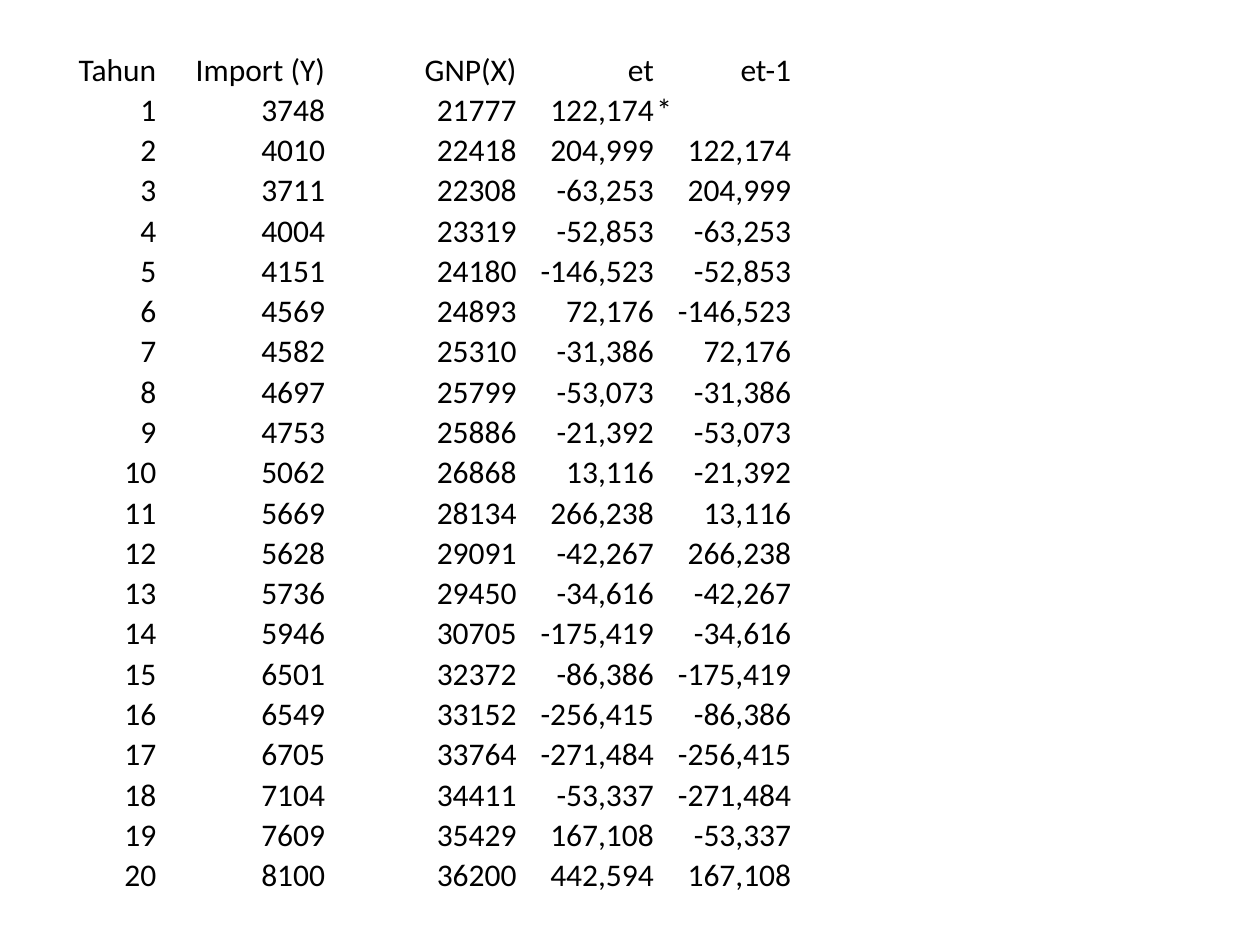
from pptx import Presentation
from pptx.dml.color import RGBColor
from pptx.enum.text import MSO_ANCHOR, PP_ALIGN
from pptx.util import Inches, Pt

HEADINGS = ["Tahun", "Import (Y)", "GNP(X)", "et", "et-1"]
OBSERVATIONS = [
    (3748, 21777, "122,174"),
    (4010, 22418, "204,999"),
    (3711, 22308, "-63,253"),
    (4004, 23319, "-52,853"),
    (4151, 24180, "-146,523"),
    (4569, 24893, "72,176"),
    (4582, 25310, "-31,386"),
    (4697, 25799, "-53,073"),
    (4753, 25886, "-21,392"),
    (5062, 26868, "13,116"),
    (5669, 28134, "266,238"),
    (5628, 29091, "-42,267"),
    (5736, 29450, "-34,616"),
    (5946, 30705, "-175,419"),
    (6501, 32372, "-86,386"),
    (6549, 33152, "-256,415"),
    (6705, 33764, "-271,484"),
    (7104, 34411, "-53,337"),
    (7609, 35429, "167,108"),
    (8100, 36200, "442,594"),
]
NO_LAG = "*"
COLORS = {"text": "000000", "background": "FFFFFF"}
COLUMN_WIDTHS = [0.86, 1.34, 1.52, 1.09, 1.09, 1.62, 1.69]
ROW_HEIGHT = 0.32
MARGIN = 0.39
CELL_FORMAT = {
    "vertical_anchor": MSO_ANCHOR.BOTTOM,
    "margin_left": Inches(0.01),
    "margin_right": Inches(0.01),
    "margin_top": Inches(0.01),
    "margin_bottom": 0,
}
FONT_FORMAT = {"name": "Calibri", "size": Pt(18), "bold": False}
TABLE_FORMAT = {"first_row": False, "horz_banding": False}


def apply_format(target, values):
    for attribute, value in values.items():
        setattr(target, attribute, value)


def residual_rows():
    residuals = [residual for *_, residual in OBSERVATIONS]
    lagged = [NO_LAG] + residuals[:-1]
    years = enumerate(zip(OBSERVATIONS, lagged), start=1)
    return [HEADINGS] + [[year, *values, lag] for year, (values, lag) in years]


def fill_cell(cell, value):
    apply_format(cell, CELL_FORMAT)
    cell.fill.solid()
    cell.fill.fore_color.rgb = RGBColor.from_string(COLORS["background"])
    if value is None:
        return
    paragraph = cell.text_frame.paragraphs[0]
    paragraph.alignment = PP_ALIGN.LEFT if value == NO_LAG else PP_ALIGN.RIGHT
    entry = paragraph.add_run()
    entry.text = str(value)
    apply_format(entry.font, FONT_FORMAT)
    entry.font.color.rgb = RGBColor.from_string(COLORS["text"])


def main():
    presentation = Presentation()
    apply_format(presentation, {"slide_width": Inches(10), "slide_height": Inches(7.5)})
    slide = presentation.slides.add_slide(presentation.slide_layouts[6])
    rows = residual_rows()
    residual_table = slide.shapes.add_table(
        len(rows), len(COLUMN_WIDTHS), Inches(MARGIN), Inches(MARGIN),
        Inches(sum(COLUMN_WIDTHS)), Inches(ROW_HEIGHT * len(rows)),
    ).table
    apply_format(residual_table, TABLE_FORMAT)
    for column, width in zip(residual_table.columns, COLUMN_WIDTHS):
        column.width = Inches(width)
    for table_row, values in zip(residual_table.rows, rows):
        table_row.height = Inches(ROW_HEIGHT)
        padding = [None] * (len(COLUMN_WIDTHS) - len(values))
        for cell, value in zip(table_row.cells, [*values, *padding]):
            fill_cell(cell, value)
    presentation.save("out.pptx")


if __name__ == "__main__":
    main()
